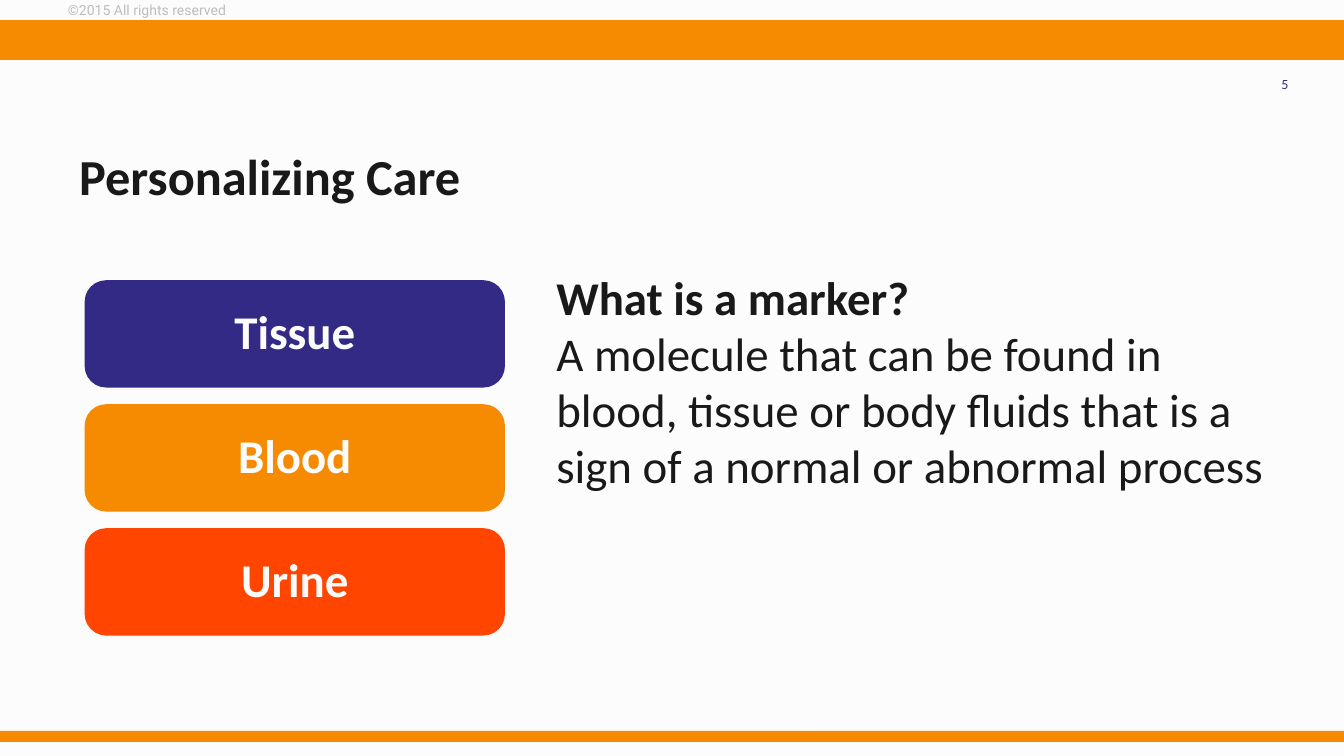
"""Builds the Personalizing Care slide about markers."""
from pptx import Presentation
from pptx.dml.color import RGBColor
from pptx.enum.shapes import MSO_SHAPE
from pptx.enum.text import MSO_ANCHOR, PP_ALIGN
from pptx.util import Pt

SCALE = 9144
RECTANGLE, ROUNDED = MSO_SHAPE.RECTANGLE, MSO_SHAPE.ROUNDED_RECTANGLE
TOP, MIDDLE = MSO_ANCHOR.TOP, MSO_ANCHOR.MIDDLE
LEFT, CENTER = PP_ALIGN.LEFT, PP_ALIGN.CENTER
COLORS = {
    "paper": "FCFCFC",
    "ink": "191919",
    "orange": "F68A00",
    "indigo": "332A86",
    "red": "FF4500",
    "gray": "BDBDBD",
}


def color(name):
    return RGBColor.from_string(COLORS[name])


class SlideBuilder:
    def __init__(self, page, font="Calibri"):
        self.page = page
        self.font = font
        fill = page.background.fill
        fill.solid()
        fill.fore_color.rgb = color("paper")

    def shape(self, kind, bounds, tint):
        shape = self.page.shapes.add_shape(kind, *(n * SCALE for n in bounds))
        shape.shadow.inherit = False
        shape.fill.solid()
        shape.fill.fore_color.rgb = color(tint)
        shape.line.fill.background()
        return shape

    def band(self, top, height, count=5, start=-3, width=537):
        for index in range(count):
            bounds = (start + index * width, top, width, height)
            segment = self.shape(RECTANGLE, bounds, "orange")
            segment.line.color.rgb = color("orange")
            segment.line.width = Pt(0.75)

    def set_text(self, shape, lines, size, tint, font=None, align=LEFT,
                 anchor=TOP, insets=(10, 5), spacing=1.0):
        frame = shape.text_frame
        across, down = (inset * SCALE for inset in insets)
        layout = {"word_wrap": True, "vertical_anchor": anchor,
                  "margin_left": across, "margin_right": across,
                  "margin_top": down, "margin_bottom": down}
        for name, value in layout.items():
            setattr(frame, name, value)
        for index, (text, bold) in enumerate(lines):
            para = frame.add_paragraph() if index else frame.paragraphs[0]
            para.alignment = align
            para.line_spacing = spacing
            span = para.add_run()
            span.text = text
            style = {"name": font or self.font, "size": Pt(size), "bold": bold}
            for name, value in style.items():
                setattr(span.font, name, value)
            span.font.color.rgb = color(tint)

    def text(self, bounds, lines, size, tint, **options):
        box = self.page.shapes.add_textbox(*(n * SCALE for n in bounds))
        self.set_text(box, lines, size, tint, **options)

    def card(self, bounds, label, tint):
        card = self.shape(ROUNDED, bounds, tint)
        card.adjustments[0] = 0.2
        self.set_text(card, [(label, True)], 67, "paper", align=CENTER,
                      anchor=MIDDLE, insets=(52, 32), spacing=0.9)


def main():
    deck = Presentation()
    deck.slide_width, deck.slide_height = 2667 * SCALE, 1500 * SCALE
    builder = SlideBuilder(deck.slides.add_slide(deck.slide_layouts[6]))

    builder.band(1450, 20)
    builder.text((125, -1, 942, 44), [("©2015 All rights reserved", False)],
                 20, "gray", font="Roboto")
    builder.band(40, 78)
    builder.text((133, 223, 2400, 250), [("Personalizing Care", True)],
                 72, "ink", anchor=MIDDLE, insets=(24, 12))

    samples = [("Tissue", "indigo"), ("Blood", "orange"), ("Urine", "red")]
    for index, (label, tint) in enumerate(samples):
        builder.card((168, 556 + index * 246, 834, 213), label, tint)

    definition = [
        ("What is a marker?", True),
        ("A molecule that can be found in blood, tissue or body fluids "
         "that is a sign of a normal or abnormal process", False),
    ]
    builder.text((1080, 520, 1454, 586), definition, 67, "ink",
                 insets=(24, 12))
    builder.text((2505, 130, 90, 74), [("5", False)], 20, "indigo",
                 align=CENTER, anchor=MIDDLE)
    deck.save("out.pptx")


if __name__ == "__main__":
    main()
